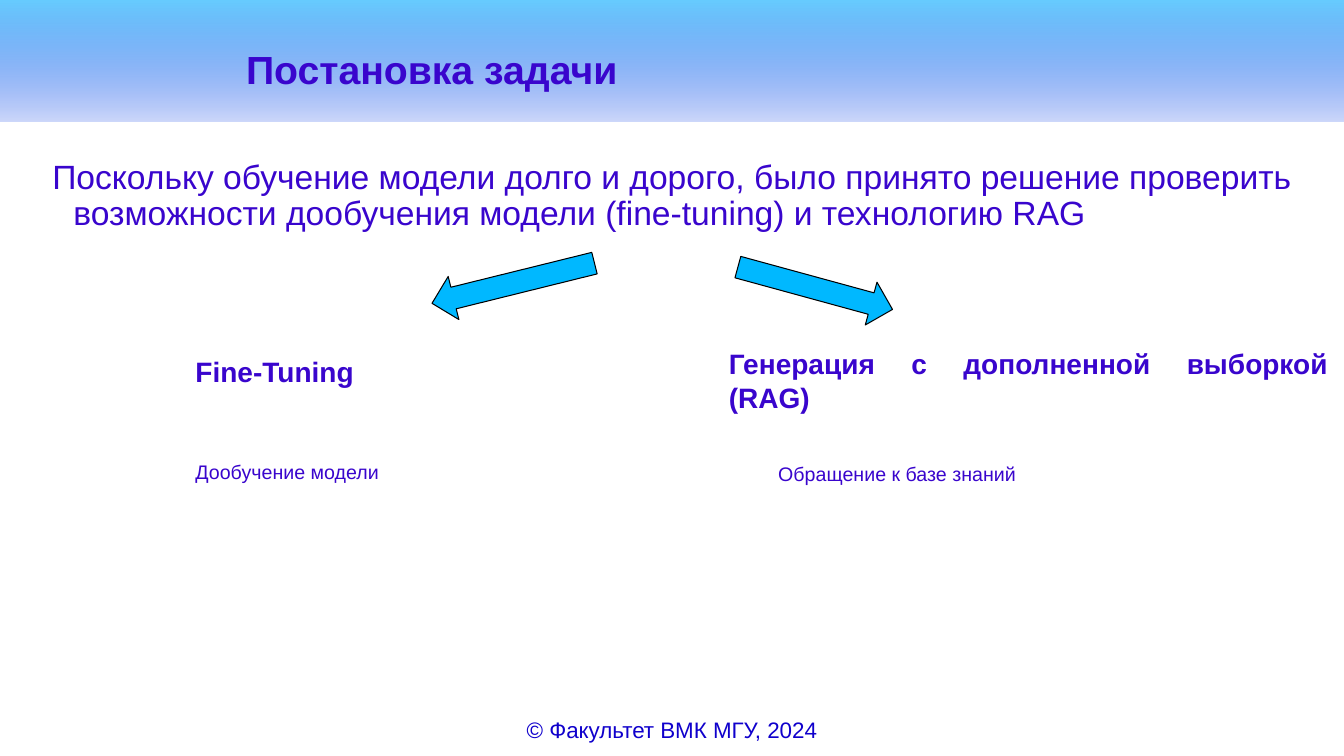
"""Build the task statement slide: two options, fine-tuning and RAG."""
from dataclasses import dataclass

import pptx
import pptx.dml.color
import pptx.enum.shapes
import pptx.enum.text
import pptx.oxml
import pptx.util

Inches = pptx.util.Inches
Pt = pptx.util.Pt
Align = pptx.enum.text.PP_ALIGN
Anchor = pptx.enum.text.MSO_ANCHOR
Shape = pptx.enum.shapes.MSO_SHAPE

INK = "3905CD"
DRAWING_NS = "http://schemas.openxmlformats.org/drawingml/2006/main"


@dataclass
class Label:
    text: str
    left: float
    top: float
    width: float
    height: float
    size: float
    bold: bool = False
    color: str = INK
    align: Align = Align.LEFT
    anchor: Anchor = Anchor.TOP
    line_spacing: float = 1.0
    hanging: float = 0.0


@dataclass
class Arrow:
    left: float
    top: float
    width: float
    rotation: float
    height: float = 0.44


TITLE = Label("Постановка задачи", 2.34, 0.02, 9.78, 1.38, 28, bold=True,
              anchor=Anchor.MIDDLE, line_spacing=0.89)
LABELS = [
    Label("Поскольку обучение модели долго и дорого, было принято решение "
          "проверить возможности дообучения модели (fine-tuning) и технологию RAG",
          0.42, 1.55, 12.55, 0.9, 24, line_spacing=0.89, hanging=0.21),
    Label("Fine-Tuning", 1.84, 3.47, 5.2, 0.42, 20, bold=True),
    Label("Дообучение модели", 1.84, 4.51, 5.2, 0.34, 14),
    Label("Генерация с дополненной выборкой (RAG)", 7.13, 3.39, 6.14, 0.74, 20,
          bold=True, align=Align.JUSTIFY),
    Label("Обращение к базе знаний", 7.62, 4.53, 5.65, 0.34, 14),
    Label("© Факультет ВМК МГУ, 2024", 5.09, 7, 3.15, 0.48, 16, color="1000CC",
          align=Align.CENTER, anchor=Anchor.MIDDLE),
]
ARROWS = [Arrow(4.26, 2.59, 1.66, 166.1), Arrow(7.29, 2.64, 1.59, 15.3)]


def rgb(code: str) -> pptx.dml.color.RGBColor:
    """Turn a hex string into a colour."""
    return pptx.dml.color.RGBColor.from_string(code)


def write_label(sp, label: Label) -> None:
    """Place a text shape and fill it with one formatted paragraph."""
    sp.left, sp.top = Inches(label.left), Inches(label.top)
    sp.width, sp.height = Inches(label.width), Inches(label.height)
    tf = sp.text_frame
    tf.word_wrap = True
    tf.auto_size = pptx.enum.text.MSO_AUTO_SIZE.NONE
    tf.vertical_anchor = label.anchor
    p = tf.paragraphs[0]
    p.text = label.text
    p.alignment = label.align
    p.line_spacing = label.line_spacing
    if label.hanging:
        indent = Inches(label.hanging)
        pPr = p._p.get_or_add_pPr()
        pPr.set("marL", str(indent))
        pPr.set("indent", str(-indent))
    p.font.name = "Arial"
    p.font.size = Pt(label.size)
    p.font.bold = label.bold
    p.font.color.rgb = rgb(label.color)


def add_band(slide) -> None:
    """Add the gradient header band behind everything else."""
    sp = slide.shapes.add_shape(Shape.RECTANGLE, 0, 0, Inches(13.33), Inches(1.21))
    sp.shadow.inherit = False
    sp.line.fill.background()
    sp.fill.gradient()
    sp.fill.gradient_angle = 270
    for stop, code in zip(sp.fill.gradient_stops, ("66CCFF", "063DE8")):
        stop.color.rgb = rgb(code)
    end_color = sp._element.spPr.findall(f".//{{{DRAWING_NS}}}srgbClr")[-1]
    end_color.append(pptx.oxml.parse_xml(f'<a:alpha xmlns:a="{DRAWING_NS}" val="20000"/>'))
    slide.shapes._spTree.insert(2, sp._element)


def add_arrow(slide, arrow: Arrow) -> None:
    """Add one rotated block arrow."""
    sp = slide.shapes.add_shape(Shape.RIGHT_ARROW, Inches(arrow.left), Inches(arrow.top),
                                Inches(arrow.width), Inches(arrow.height))
    sp.rotation = arrow.rotation
    sp.shadow.inherit = False
    sp.fill.solid()
    sp.fill.fore_color.rgb = rgb("00B8FF")
    sp.line.color.rgb = rgb("000000")
    sp.line.width = Pt(0.75)


def main() -> None:
    """Assemble and save the slide."""
    prs = pptx.Presentation()
    prs.slide_width, prs.slide_height = Inches(13.33), Inches(7.5)
    slide = prs.slides.add_slide(prs.slide_layouts[5])
    add_band(slide)
    write_label(slide.shapes.title, TITLE)
    for label in LABELS:
        write_label(slide.shapes.add_textbox(0, 0, 0, 0), label)
    for arrow in ARROWS:
        add_arrow(slide, arrow)
    prs.save("out.pptx")


if __name__ == "__main__":
    main()
